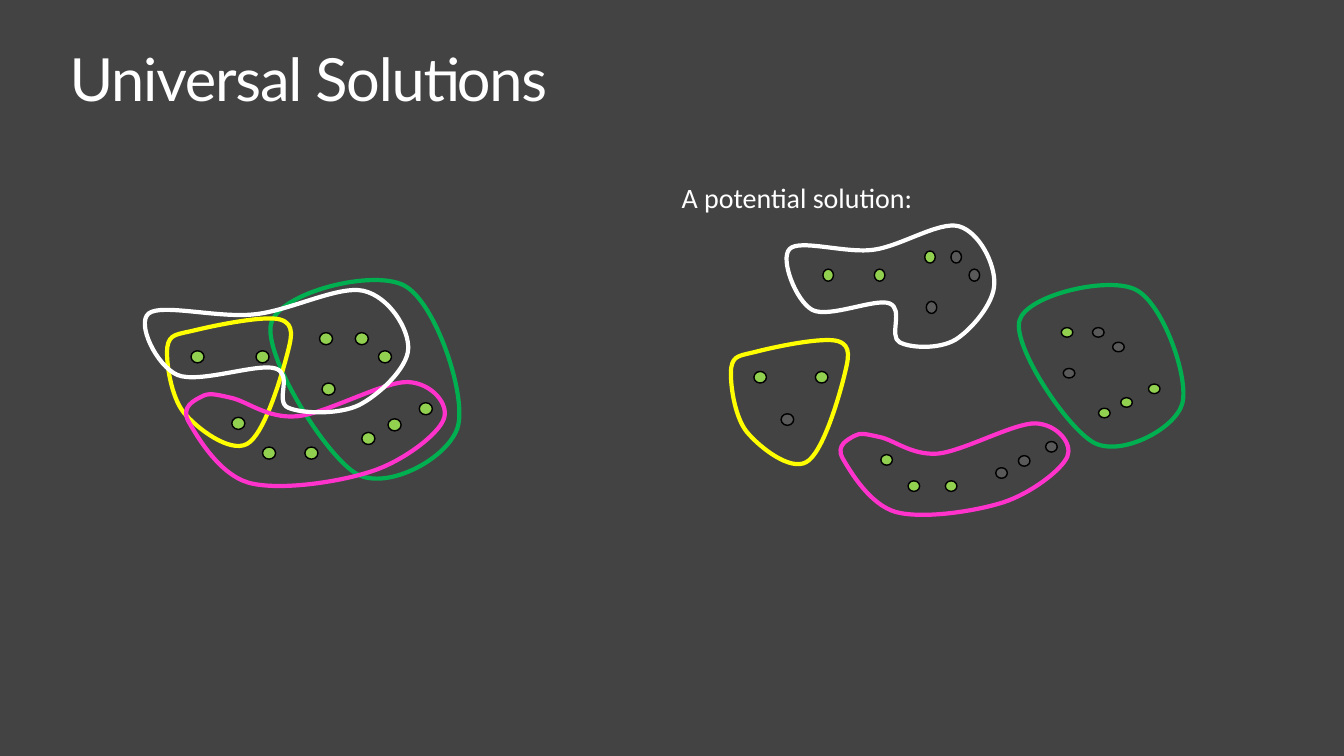
"""Draw the slide on universal solutions: overlapping sets and one way to split them."""
from dataclasses import dataclass

from lxml.etree import SubElement
from pptx import Presentation
from pptx.dml.color import RGBColor
from pptx.enum.shapes import MSO_SHAPE
from pptx.enum.text import MSO_ANCHOR, MSO_AUTO_SIZE, PP_ALIGN
from pptx.oxml.ns import qn
from pptx.shapes.autoshape import Shape
from pptx.shapes.shapetree import GroupShapes
from pptx.slide import Slide
from pptx.text.text import TextFrame
from pptx.util import Pt

SCALE = 9144
Point = tuple[int, int]
Box = tuple[int, int, int, int]


@dataclass(frozen=True)
class Theme:
    """Colours, fonts and sizes of the slide."""
    back: str = "434343"
    text: str = "FFFFFF"
    edge: str = "000000"
    live: str = "92D050"
    idle: str = "595959"
    green: str = "00B050"
    yellow: str = "FFFF00"
    pink: str = "FF33CC"
    white: str = "FFFFFF"
    head: str = "Lato"
    body: str = "Calibri"
    big: int = 85
    small: int = 40
    thick: int = 6
    thin: int = 2


@dataclass(frozen=True)
class Loop:
    """A closed curve: a start point, then three control points for each arc."""
    color: str
    points: tuple[Point, ...]


@dataclass(frozen=True)
class Cluster:
    """Loops with their boxes, and the live and idle dots among them."""
    loops: tuple[tuple[Loop, Box], ...]
    dot: Point
    live: tuple[Point, ...]
    idle: tuple[Point, ...] = ()


THEME = Theme()
GREEN = Loop(THEME.green, (
    (709, 941), (647, 907), (522, 705), (538, 642), (554, 580), (742, 533), (803, 567),
    (865, 601), (925, 782), (909, 845), (893, 907), (771, 974), (709, 941)))
YELLOW = Loop(THEME.yellow, (
    (332, 689), (329, 717), (339, 787), (365, 819), (392, 851), (456, 899), (490, 881),
    (524, 863), (557, 751), (568, 710), (579, 669), (586, 643), (556, 634),
    (526, 625), (425, 646), (388, 655), (351, 664), (336, 662), (332, 689)))
PINK = Loop(THEME.pink, (
    (374, 836), (390, 864), (434, 941), (494, 958), (554, 974), (670, 957), (735, 936),
    (799, 916), (868, 863), (880, 833), (893, 804), (858, 760), (809, 758),
    (760, 757), (647, 821), (589, 826), (530, 831), (489, 795), (457, 789),
    (426, 782), (414, 779), (400, 787), (386, 794), (358, 807), (374, 836)))
WHITE = Loop(THEME.white, (
    (295, 622), (270, 642), (311, 726), (352, 744), (394, 762), (510, 720), (546, 731),
    (583, 742), (544, 797), (572, 809), (599, 821), (672, 823), (712, 804),
    (752, 784), (809, 730), (810, 692), (812, 654), (773, 589), (721, 577),
    (670, 566), (573, 618), (502, 624), (431, 631), (320, 602), (295, 622)))

CLUSTERS = (
    Cluster(
        ((GREEN, (522, 533, 403, 441)), (YELLOW, (329, 625, 257, 274)),
         (PINK, (358, 757, 535, 217)), (WHITE, (270, 566, 542, 257))),
        (26, 24),
        ((379, 696), (508, 696), (634, 660), (705, 660), (751, 696), (639, 760), (460, 828),
         (521, 887), (605, 887), (718, 858), (770, 831), (832, 799))),
    Cluster(
        ((GREEN, (2009, 547, 351, 359)),), (23, 19),
        ((2106, 650), (2180, 810), (2224, 789), (2279, 762)),
        ((2168, 650), (2208, 679), (2110, 731))),
    Cluster(
        ((PINK, (1658, 839, 471, 191)),), (23, 21),
        ((1748, 902), (1802, 954), (1876, 954)),
        ((1976, 928), (2021, 904), (2075, 876))),
    Cluster(
        ((YELLOW, (1448, 668, 243, 267)),), (25, 23),
        ((1496, 737), (1618, 737)), ((1550, 821),)),
    Cluster(
        ((WHITE, (1547, 438, 428, 255)),), (21, 24),
        ((1633, 534), (1735, 534), (1835, 498)),
        ((1887, 498), (1923, 534), (1838, 598))),
)


def px(size: int) -> int:
    """Turn px into EMU."""
    return size * SCALE


def outline(shape: Shape, color: str, width: int) -> None:
    """Set a plain line and drop the shadow."""
    shape.shadow.inherit = False
    shape.line.color.rgb = RGBColor.from_string(color)
    shape.line.width = Pt(width)


def fit(points: tuple[Point, ...], box: Box) -> list[Point]:
    """Stretch points so that they fill a box."""
    xs, ys = zip(*points)
    left, top, width, height = box
    wide = width / (max(xs) - min(xs))
    tall = height / (max(ys) - min(ys))
    return [(round(left + (x - min(xs)) * wide), round(top + (y - min(ys)) * tall))
            for x, y in points]


def bend(shape: Shape) -> None:
    """Join each three straight segments into one cubic arc."""
    track = shape.element.find(".//" + qn("a:path"))
    lines = track.findall(qn("a:lnTo"))
    for start in range(0, len(lines), 3):
        arc = SubElement(track, qn("a:cubicBezTo"))
        for line in lines[start:start + 3]:
            arc.append(line[0])
            track.remove(line)
    track.append(track.find(qn("a:close")))


def draw_loop(shapes: GroupShapes, loop: Loop, box: Box) -> None:
    """Draw one set as an unfilled curve."""
    first, *rest = fit(loop.points, box)
    pen = shapes.build_freeform(*first, scale=SCALE)
    pen.add_line_segments(rest, close=True)
    shape = pen.convert_to_shape()
    bend(shape)
    shape.fill.background()
    outline(shape, loop.color, THEME.thick)


def draw_dot(shapes: GroupShapes, place: Point, size: Point, color: str) -> None:
    """Draw one element of a set."""
    shape = shapes.add_shape(MSO_SHAPE.OVAL, *map(px, place + size))
    shape.fill.solid()
    shape.fill.fore_color.rgb = RGBColor.from_string(color)
    outline(shape, THEME.edge, THEME.thin)


def draw_cluster(slide: Slide, cluster: Cluster) -> None:
    """Draw loops and dots as one group."""
    shapes = slide.shapes.add_group_shape().shapes
    for loop, box in cluster.loops:
        draw_loop(shapes, loop, box)
    for color, places in ((THEME.live, cluster.live), (THEME.idle, cluster.idle)):
        for place in places:
            draw_dot(shapes, place, cluster.dot, color)


def write(frame: TextFrame, text: str, font: str, size: int, track: int = 0) -> None:
    """Add one left-aligned run, with tracking in hundredths of a point."""
    line = frame.paragraphs[0]
    line.alignment = PP_ALIGN.LEFT
    run = line.add_run()
    run.text = text
    run.font.name = font
    run.font.size = Pt(size)
    run.font.color.rgb = RGBColor.from_string(THEME.text)
    if track:
        run.font._element.set("spc", str(track))


def draw_title(slide: Slide) -> None:
    """Place and fill the title."""
    title = slide.shapes.title
    title.left, title.top, title.width, title.height = map(px, (132, 104, 2403, 157))
    frame = title.text_frame
    frame.margin_left = frame.margin_right = frame.margin_top = frame.margin_bottom = px(6)
    frame.vertical_anchor = MSO_ANCHOR.TOP
    frame.auto_size = MSO_AUTO_SIZE.NONE
    frame.paragraphs[0].line_spacing = 0.8
    write(frame, "Universal Solutions", THEME.head, THEME.big, -170)


def draw_label(slide: Slide) -> None:
    """Add the label over the split sets."""
    frame = slide.shapes.add_textbox(*map(px, (1343, 354, 483, 77))).text_frame
    frame.word_wrap = False
    frame.auto_size = MSO_AUTO_SIZE.SHAPE_TO_FIT_TEXT
    write(frame, "A potential solution:", THEME.body, THEME.small)


def main() -> None:
    """Build and save the slide."""
    deck = Presentation()
    deck.slide_width, deck.slide_height = px(2667), px(1500)
    slide = deck.slides.add_slide(deck.slide_layouts[5])
    slide.background.fill.solid()
    slide.background.fill.fore_color.rgb = RGBColor.from_string(THEME.back)
    draw_title(slide)
    draw_label(slide)
    for cluster in CLUSTERS:
        draw_cluster(slide, cluster)
    deck.save("out.pptx")


if __name__ == "__main__":
    main()
